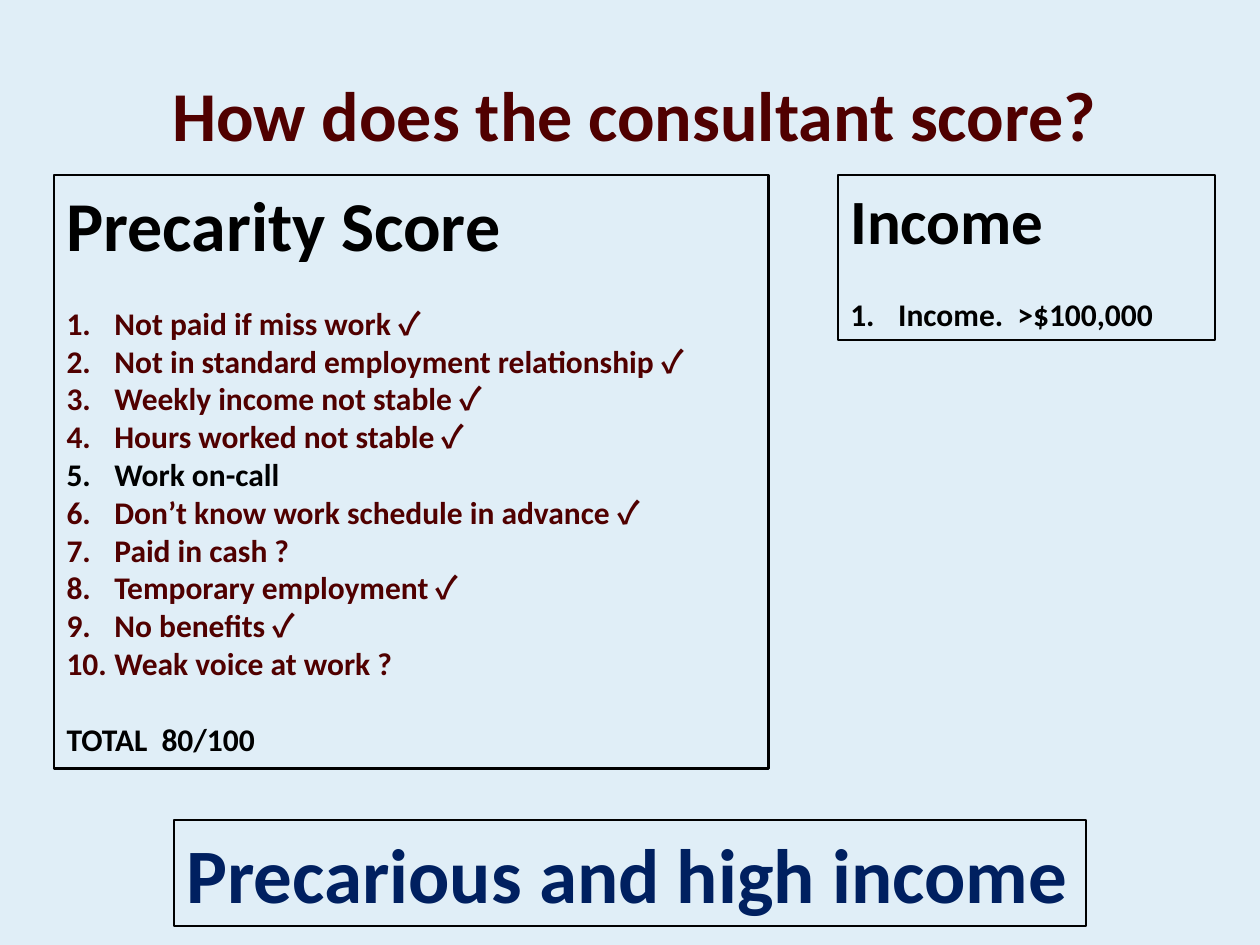
import pptx
import pptx.dml.color
import pptx.enum.shapes
import pptx.enum.text
import pptx.oxml.ns
import pptx.util
from lxml import etree

Inches, Pt = pptx.util.Inches, pptx.util.Pt
BLACK, MAROON, NAVY, PALE_BLUE = "000000", "500000", "002060", "E0EEF7"
BODY_SIZE, BLANK_LINE, HANG = 18, 22, 0.38
CHECK = "✓"

HEADLINE = "How does the consultant score?"
CRITERIA = [
    ("Not paid if miss work ", CHECK, MAROON),
    ("Not in standard employment relationship ", CHECK, MAROON),
    ("Weekly income not stable ", CHECK, MAROON),
    ("Hours worked not stable ", CHECK, MAROON),
    ("Work on-call", "", BLACK),
    ("Don’t know work schedule in advance ", CHECK, MAROON),
    ("Paid in cash ?", "", MAROON),
    ("Temporary employment ", CHECK, MAROON),
    ("No benefits ", CHECK, MAROON),
    ("Weak voice at work ?", "", MAROON),
]
INCOME = [("Income.  >$100,000", "", BLACK)]
PANELS = [
    ("Precarity Score", 40, BLACK, CRITERIA, "TOTAL  80/100", (0.43, 1.39, 5.67, 4.71)),
    ("Income", 36, BLACK, INCOME, "", (6.65, 1.39, 2.99, 1.31)),
    ("Precarious and high income", 44, NAVY, [], "", (1.38, 6.51, 7.24, 0.84)),
]


def rgb(hex_color):
    return pptx.dml.color.RGBColor.from_string(hex_color)


def style(run, size, color, font="Calibri"):
    run.font.size, run.font.bold, run.font.name = Pt(size), True, font
    run.font.color.rgb = rgb(color)


def add_text(paragraph, text, size, color):
    run = paragraph.add_run()
    run.text = text
    style(run, size, color)
    return run


def add_check(paragraph, mark, color):
    run = add_text(paragraph, mark, BODY_SIZE, color)
    run.font.name = "Noto Sans CJK JP"
    east_asian = etree.SubElement(run.font._element, pptx.oxml.ns.qn("a:ea"))
    east_asian.set("typeface", run.font.name)


def number(paragraph):
    properties = paragraph._p.get_or_add_pPr()
    properties.set("marL", str(Inches(HANG)))
    properties.set("indent", str(-Inches(HANG)))
    numbering = etree.SubElement(properties, pptx.oxml.ns.qn("a:buAutoNum"))
    numbering.set("type", "arabicPeriod")


def add_panel(slide, heading, size, color, items, total, place):
    panel = slide.shapes.add_shape(
        pptx.enum.shapes.MSO_SHAPE.RECTANGLE, *map(Inches, place))
    panel.shadow.inherit = False
    panel.fill.background()
    panel.line.color.rgb = rgb(BLACK)
    panel.line.width = Pt(1.25)
    frame = panel.text_frame
    frame.word_wrap = True
    frame.vertical_anchor = pptx.enum.text.MSO_ANCHOR.TOP
    add_text(frame.paragraphs[0], heading, size, color)
    for position, (criterion, mark, item_color) in enumerate(items):
        entry = frame.add_paragraph()
        if position == 0:
            entry.space_before = Pt(BLANK_LINE)
        number(entry)
        add_text(entry, criterion, BODY_SIZE, item_color)
        if mark:
            add_check(entry, mark, item_color)
    if total:
        closing = frame.add_paragraph()
        closing.space_before = Pt(BLANK_LINE)
        add_text(closing, total, BODY_SIZE, BLACK)
    for paragraph in frame.paragraphs:
        paragraph.alignment = pptx.enum.text.PP_ALIGN.LEFT


def main():
    deck = pptx.Presentation()
    deck.slide_width, deck.slide_height = Inches(10), Inches(7.5)
    slide = deck.slides.add_slide(deck.slide_layouts[5])
    slide.background.fill.solid()
    slide.background.fill.fore_color.rgb = rgb(PALE_BLUE)

    headline = slide.shapes.title
    headline.left, headline.top = Inches(0.35), Inches(0.52)
    headline.width, headline.height = Inches(9.37), Inches(0.77)
    headline.text_frame.text = HEADLINE
    headline.text_frame.vertical_anchor = pptx.enum.text.MSO_ANCHOR.TOP
    headline.text_frame.paragraphs[0].alignment = pptx.enum.text.PP_ALIGN.CENTER
    style(headline.text_frame.paragraphs[0].runs[0], 40, MAROON)

    for panel in PANELS:
        add_panel(slide, *panel)
    deck.save("out.pptx")


if __name__ == "__main__":
    main()
